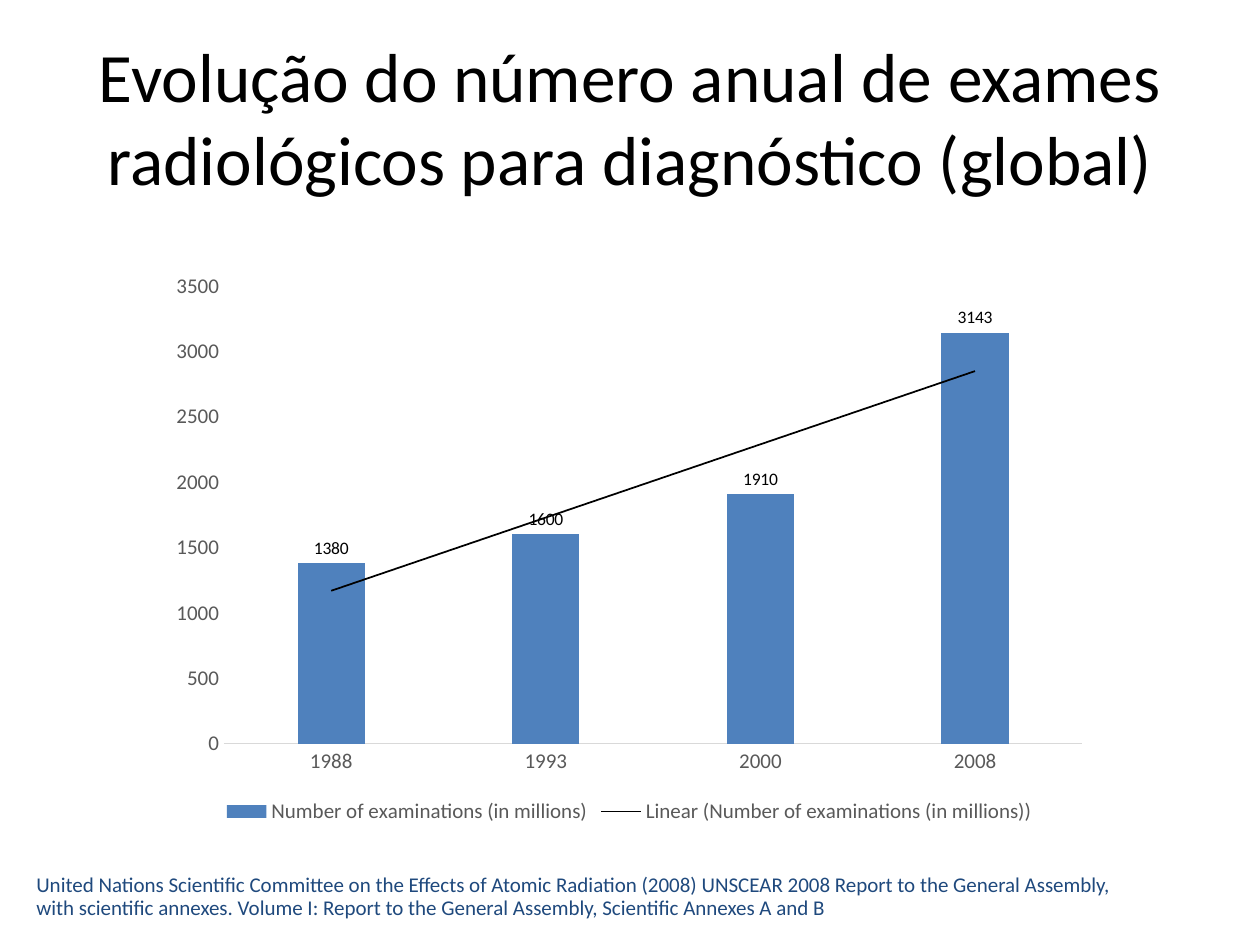
from lxml import etree
from pptx import Presentation
from pptx.chart.data import CategoryChartData
from pptx.dml.color import RGBColor
from pptx.enum.chart import XL_CHART_TYPE, XL_LABEL_POSITION, XL_LEGEND_POSITION, XL_TICK_MARK
from pptx.enum.text import MSO_ANCHOR, PP_ALIGN
from pptx.util import Inches, Pt

COLUMN = XL_CHART_TYPE.COLUMN_CLUSTERED
OUTSIDE_END = XL_LABEL_POSITION.OUTSIDE_END
BOTTOM = XL_LEGEND_POSITION.BOTTOM
NO_TICK = XL_TICK_MARK.NONE
MIDDLE = MSO_ANCHOR.MIDDLE
CENTER = PP_ALIGN.CENTER

BLACK = RGBColor(0x00, 0x00, 0x00)
GRAY = RGBColor(0x59, 0x59, 0x59)
LIGHT_GRAY = RGBColor(0xD9, 0xD9, 0xD9)
BLUE = RGBColor(0x4F, 0x81, 0xBD)
NAVY = RGBColor(0x1F, 0x49, 0x7D)

TRENDLINE = """
<c:trendline xmlns:c="http://schemas.openxmlformats.org/drawingml/2006/chart"
             xmlns:a="http://schemas.openxmlformats.org/drawingml/2006/main">
  <c:spPr><a:ln w="12700"><a:solidFill><a:srgbClr val="000000"/></a:solidFill></a:ln></c:spPr>
  <c:trendlineType val="linear"/><c:dispRSqr val="0"/><c:dispEq val="0"/>
</c:trendline>"""


def set_font(font, size, color):
    for name, value in {"name": "Calibri", "size": Pt(size), "bold": False}.items():
        setattr(font, name, value)
    font.color.rgb = color


prs = Presentation()
prs.slide_width, prs.slide_height = Inches(10), Inches(7.5)
slide = prs.slides.add_slide(prs.slide_layouts[6])

# Title
title = slide.shapes.add_textbox(Inches(0.5), Inches(0.3), Inches(9), Inches(1.25)).text_frame
title.word_wrap = True
title.vertical_anchor = MIDDLE
heading = title.paragraphs[0]
heading.alignment = CENTER
heading.text = "Evolução do número anual de exames radiológicos para diagnóstico (global)"
set_font(heading.runs[0].font, 39.6, BLACK)

# Column chart of yearly examinations
exams = CategoryChartData(number_format="0")
exams.categories = ["1988", "1993", "2000", "2008"]
exams.add_series("Number of examinations (in millions)", [1380, 1600, 1910, 3143])
chart = slide.shapes.add_chart(
    COLUMN, Inches(1.25), Inches(2.08), Inches(7.49), Inches(4.5), exams).chart
chart.has_title = False
set_font(chart.font, 10, BLACK)

# Axes
years, counts = chart.category_axis, chart.value_axis
for axis in (years, counts):
    axis.major_tick_mark = axis.minor_tick_mark = NO_TICK
    axis.has_major_gridlines = False
    set_font(axis.tick_labels.font, 12, GRAY)
years.format.line.color.rgb = LIGHT_GRAY
years.format.line.width = Pt(0.75)
counts.format.line.fill.background()
counts.minimum_scale, counts.maximum_scale, counts.major_unit = 0, 3500, 500

# Legend
chart.has_legend = True
chart.legend.position = BOTTOM
chart.legend.include_in_layout = False
set_font(chart.legend.font, 12, GRAY)

# Columns with their values
plot = chart.plots[0]
plot.vary_by_categories = False
plot.gap_width, plot.overlap = 219, -27
columns = plot.series[0]
columns.format.fill.solid()
columns.format.fill.fore_color.rgb = BLUE
labels = columns.data_labels
labels.show_value = True
labels.position = OUTSIDE_END
set_font(labels.font, 10, BLACK)

# Linear trend, placed right before the categories
columns._element.cat.addprevious(etree.fromstring(TRENDLINE))

# Reference
reference = slide.shapes.add_textbox(
    Inches(0.19), Inches(6.89), Inches(8.87), Inches(0.47)).text_frame
reference.word_wrap = False
reference.text = (
    "United Nations Scientific Committee on the Effects of Atomic Radiation (2008) "
    "UNSCEAR 2008 Report to the General Assembly,\n"
    "with scientific annexes. Volume I: Report to the General Assembly, "
    "Scientific Annexes A and B")
for line in reference.paragraphs:
    line.line_spacing = 0.9
    set_font(line.runs[0].font, 12, NAVY)

prs.save("out.pptx")
